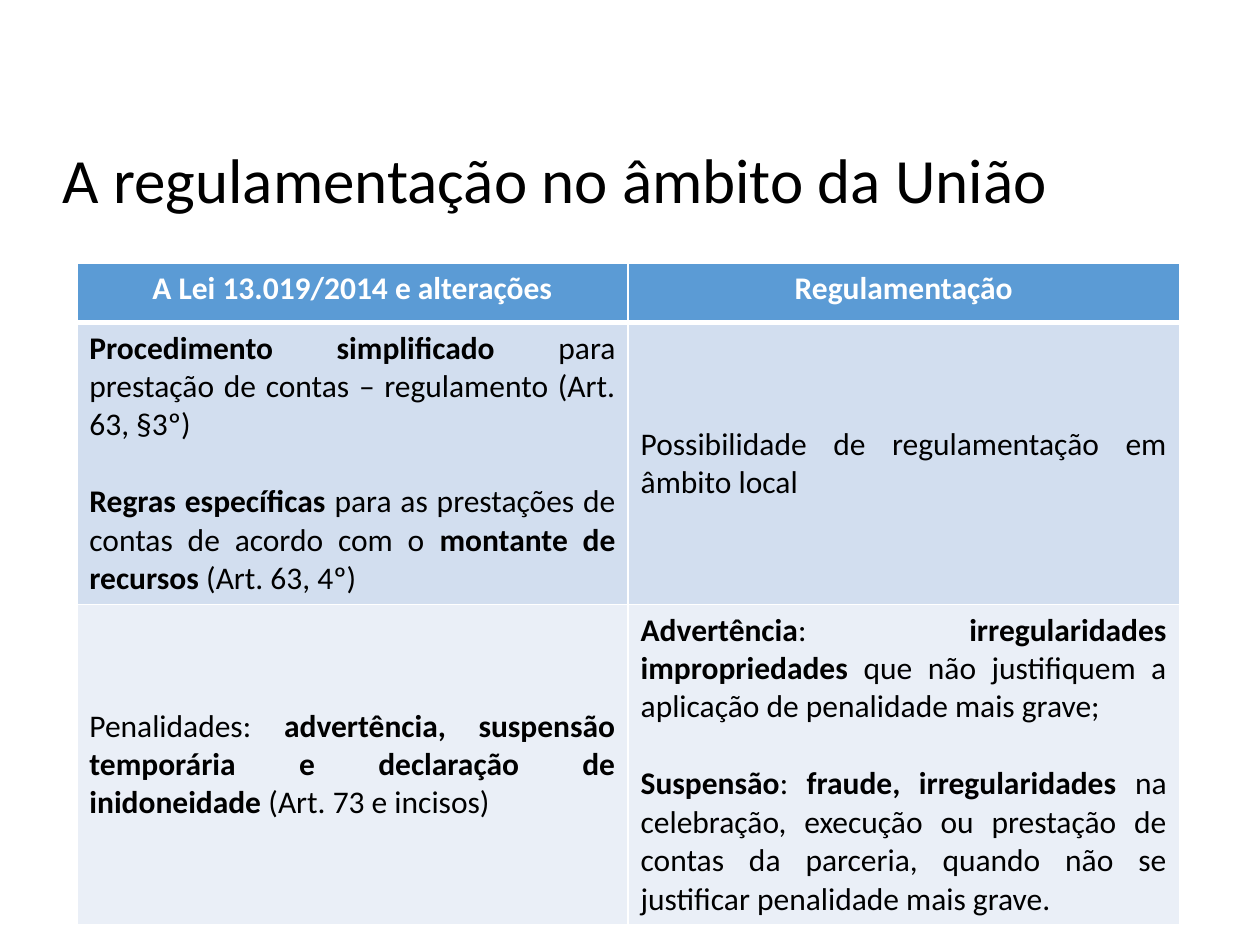
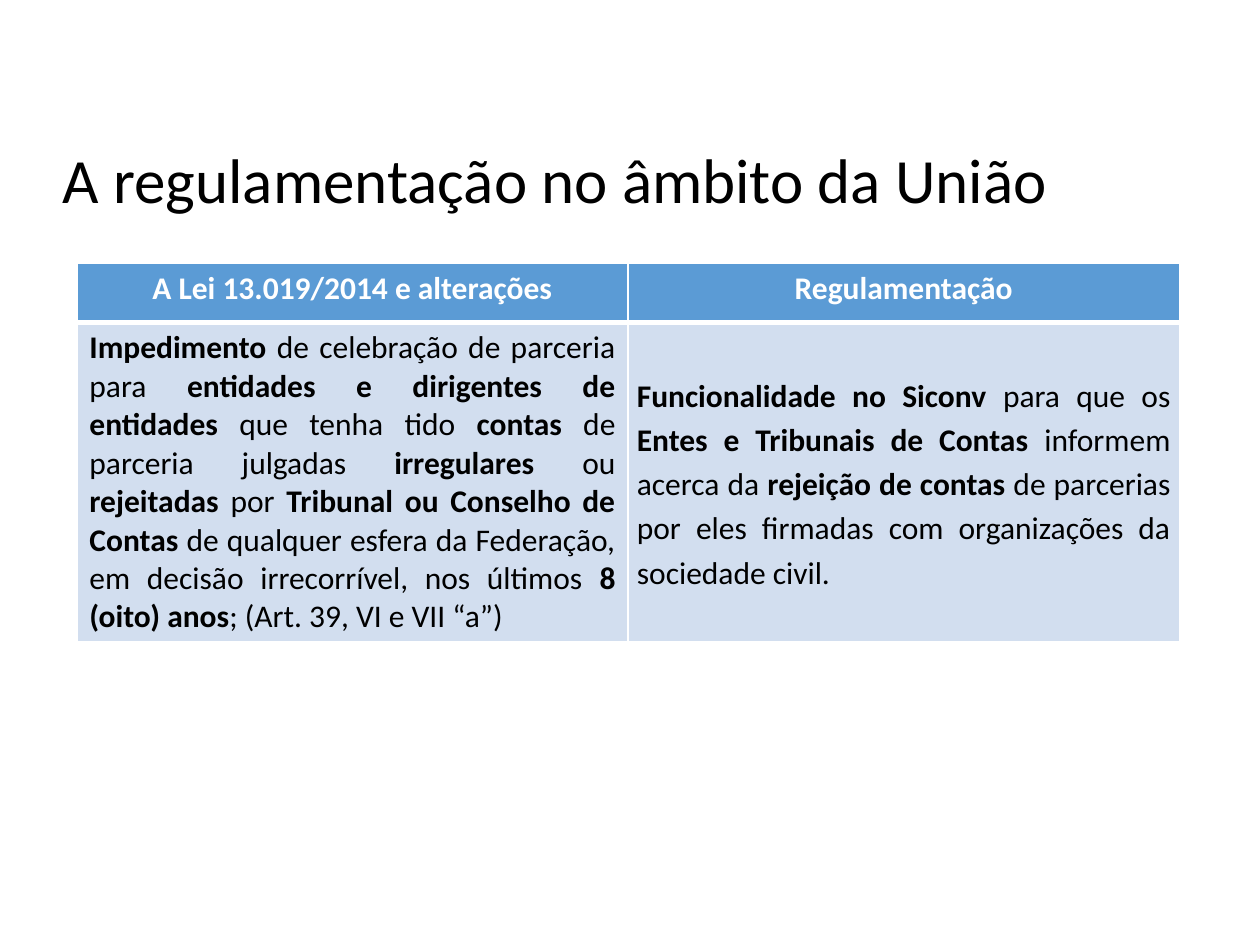
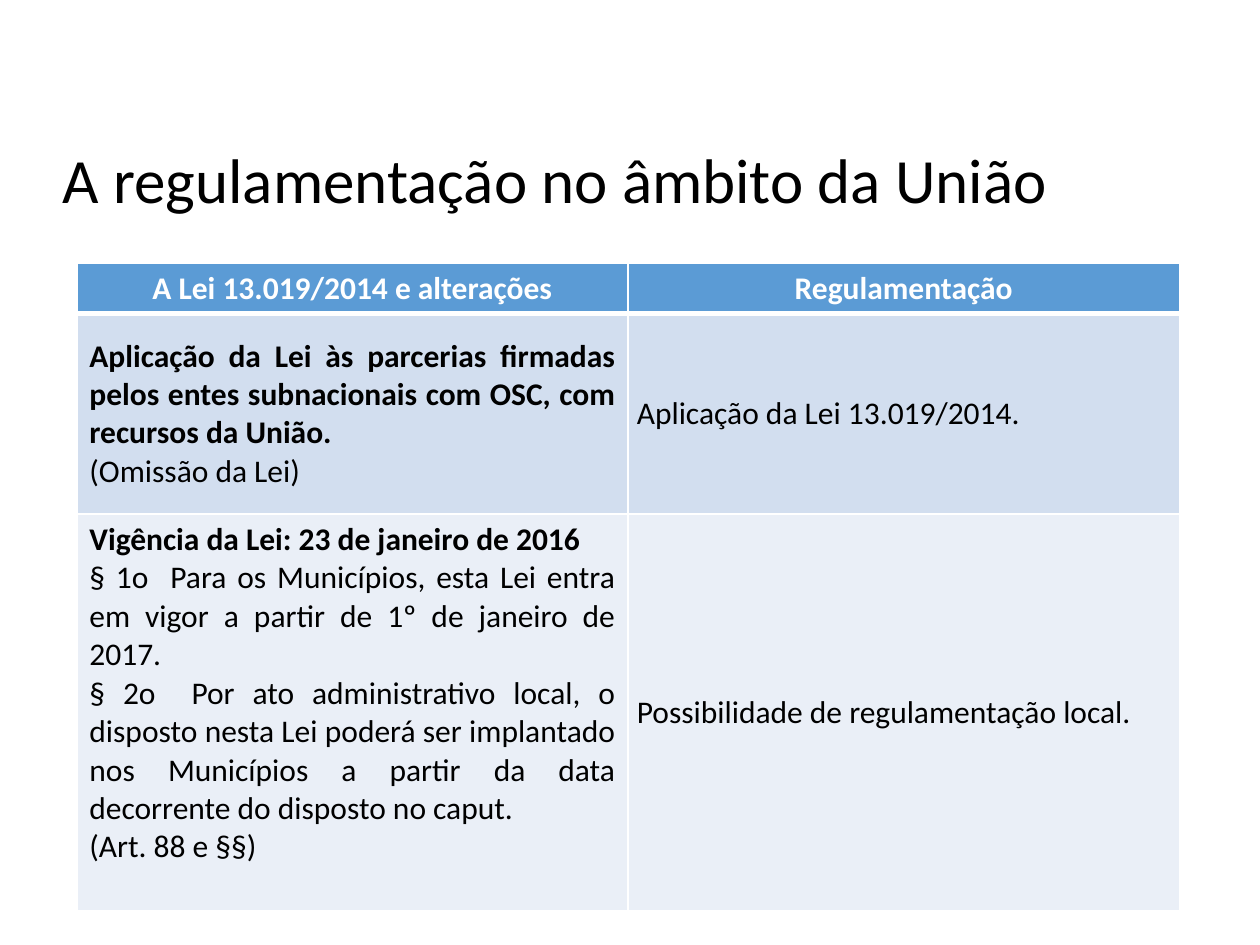
from lxml.etree import SubElement
from pptx import Presentation
from pptx.dml.color import RGBColor
from pptx.enum.text import MSO_ANCHOR as Anchor, PP_ALIGN as Align
from pptx.oxml.ns import qn
from pptx.util import Inches, Pt

# Content: **marks** enclose bold words; each cell is a list of paragraphs
TITLE = "A regulamentação no âmbito da União"
HEADINGS = ("A Lei 13.019/2014 e alterações", "Regulamentação")

# Cell options: tight = narrow margins, gap = points between paragraphs,
# line = line spacing, bottom = bottom margin, align = alignment
TABLES = [
    {
        "heights": (0.47, 2.24, 2.54),
        "rows": [
            (
                (["**Procedimento simplificado** para prestação de contas – regulamento (Art. 63, §3º)",
                  "**Regras específicas** para as prestações de contas de acordo com o "
                  "**montante de recursos** (Art. 63, 4º)"], {"gap": 22}),
                (["Possibilidade de regulamentação em âmbito local"], {}),
            ),
            (
                (["Penalidades: **advertência, suspensão temporária e declaração de "
                  "inidoneidade** (Art. 73 e incisos)"], {}),
                (["**Advertência**: **irregularidades impropriedades** que não justifiquem a "
                  "aplicação de penalidade mais grave;",
                  "**Suspensão**: **fraude, irregularidades** na celebração, execução ou prestação "
                  "de contas da parceria, quando não se justificar penalidade mais grave."],
                 {"gap": 22}),
            ),
        ],
    },
    {
        "heights": (0.47, 2.53),
        "rows": [
            (
                (["**Impedimento** de celebração de parceria para **entidades e dirigentes de "
                  "entidades** que tenha tido **contas** de parceria julgadas **irregulares** ou "
                  "**rejeitadas** por **Tribunal ou Conselho de Contas** de qualquer esfera da "
                  "Federação, em decisão irrecorrível, nos últimos **8 (oito) anos**; "
                  "(Art. 39, VI e VII “a”)"], {}),
                (["**Funcionalidade no Siconv** para que os **Entes e Tribunais de Contas** "
                  "informem acerca da **rejeição de contas** de parcerias por eles firmadas com "
                  "organizações da sociedade civil."], {"tight": True, "line": 1.15}),
            ),
        ],
    },
    {
        "heights": (0.4, 1.59, 3.15),
        "rows": [
            (
                (["**Aplicação da Lei às parcerias firmadas pelos entes subnacionais com OSC, "
                  "com recursos da União.**",
                  "(Omissão da Lei)"], {}),
                (["Aplicação da Lei 13.019/2014."], {"tight": True}),
            ),
            (
                (["**Vigência da Lei: 23 de janeiro de 2016**",
                  "§ 1o  Para os Municípios, esta Lei entra em vigor a partir de 1º de janeiro de 2017.",
                  "§ 2o  Por ato administrativo local, o disposto nesta Lei poderá ser implantado "
                  "nos Municípios a partir da data decorrente do disposto no caput.",
                  "(Art. 88 e §§)"], {"bottom": 0.36}),
                (["Possibilidade de regulamentação local."], {"tight": True, "align": Align.LEFT}),
            ),
        ],
    },
]

# Shared style
FONT = "Calibri"
BLACK, WHITE = "000000", "FFFFFF"
HEADER_FILL = "5B9BD5"
BAND_FILLS = ("D2DEEF", "EAEFF7")
TITLE_BOX = (0.4, 0.84, 8.3, 0.93)
TABLE_LEFT, TABLE_TOP, TABLE_WIDTH = 0.61, 2.09, 8.75


def color(value):
    return RGBColor.from_string(value)


def write(para, text, size, ink, bold=False):
    para.font.name = FONT
    para.font.size = Pt(size)
    para.font.color.rgb = color(ink)
    para.font.bold = bold
    for index, part in enumerate(text.split("**")):
        if part:
            span = para.add_run()
            span.text = part
            if index % 2:
                span.font.bold = True


def add_title(page):
    box = page.shapes.add_textbox(*map(Inches, TITLE_BOX))
    frame = box.text_frame
    frame.word_wrap = True
    frame.vertical_anchor = Anchor.BOTTOM
    para = frame.paragraphs[0]
    para.line_spacing = 0.9
    write(para, TITLE, 36, BLACK)


def paint(cell, fill, top=1, bottom=1):
    """White borders, in points, then the fill."""
    properties = cell._tc.get_or_add_tcPr()
    for side, width in (("lnL", 1), ("lnR", 1), ("lnT", top), ("lnB", bottom)):
        line = SubElement(properties, qn(f"a:{side}"), w=str(Pt(width)))
        SubElement(SubElement(line, qn("a:solidFill")), qn("a:srgbClr"), val=WHITE)
    cell.fill.solid()
    cell.fill.fore_color.rgb = color(fill)


def fill_body(cell, paragraphs, tight=False, gap=0, line=None, bottom=None, align=Align.JUSTIFY):
    cell.vertical_anchor = Anchor.MIDDLE
    if tight:
        cell.margin_left = cell.margin_right = Inches(0.07)
        cell.margin_top = cell.margin_bottom = 0
    if bottom:
        cell.margin_bottom = Inches(bottom)
    frame = cell.text_frame
    for index, text in enumerate(paragraphs):
        para = frame.add_paragraph() if index else frame.paragraphs[0]
        para.alignment = align
        if line:
            para.line_spacing = line
        if index and gap:
            para.space_before = Pt(gap)
        write(para, text, 18, BLACK)


def add_rules_table(page, heights, rows):
    frame = page.shapes.add_table(
        len(heights), len(HEADINGS), Inches(TABLE_LEFT), Inches(TABLE_TOP),
        Inches(TABLE_WIDTH), Inches(sum(heights)))
    table = frame.table
    for row, height in zip(table.rows, heights):
        row.height = Inches(height)

    # Header row
    for cell, heading in zip(table.rows[0].cells, HEADINGS):
        paint(cell, HEADER_FILL, bottom=3)
        para = cell.text_frame.paragraphs[0]
        para.alignment = Align.CENTER
        write(para, heading, 18, WHITE, bold=True)

    # Banded body rows
    for number, contents in enumerate(rows):
        for cell, (paragraphs, options) in zip(table.rows[number + 1].cells, contents):
            paint(cell, BAND_FILLS[number % 2], top=1 if number else 3)
            fill_body(cell, paragraphs, **options)


def main():
    deck = Presentation()
    deck.slide_width, deck.slide_height = Inches(10), Inches(7.5)
    for content in TABLES:
        page = deck.slides.add_slide(deck.slide_layouts[6])
        add_title(page)
        add_rules_table(page, **content)
    deck.save("out.pptx")


if __name__ == "__main__":
    main()
